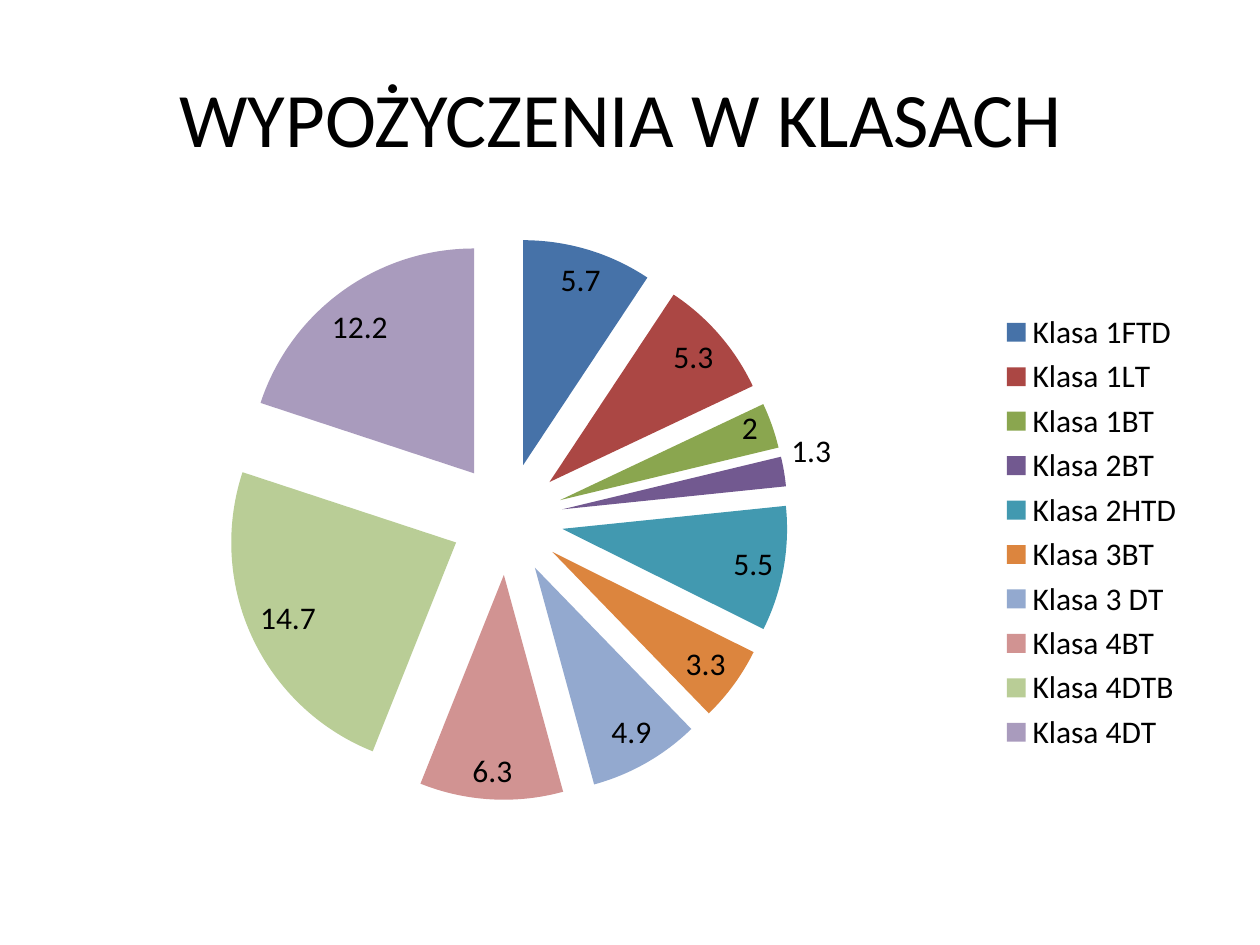
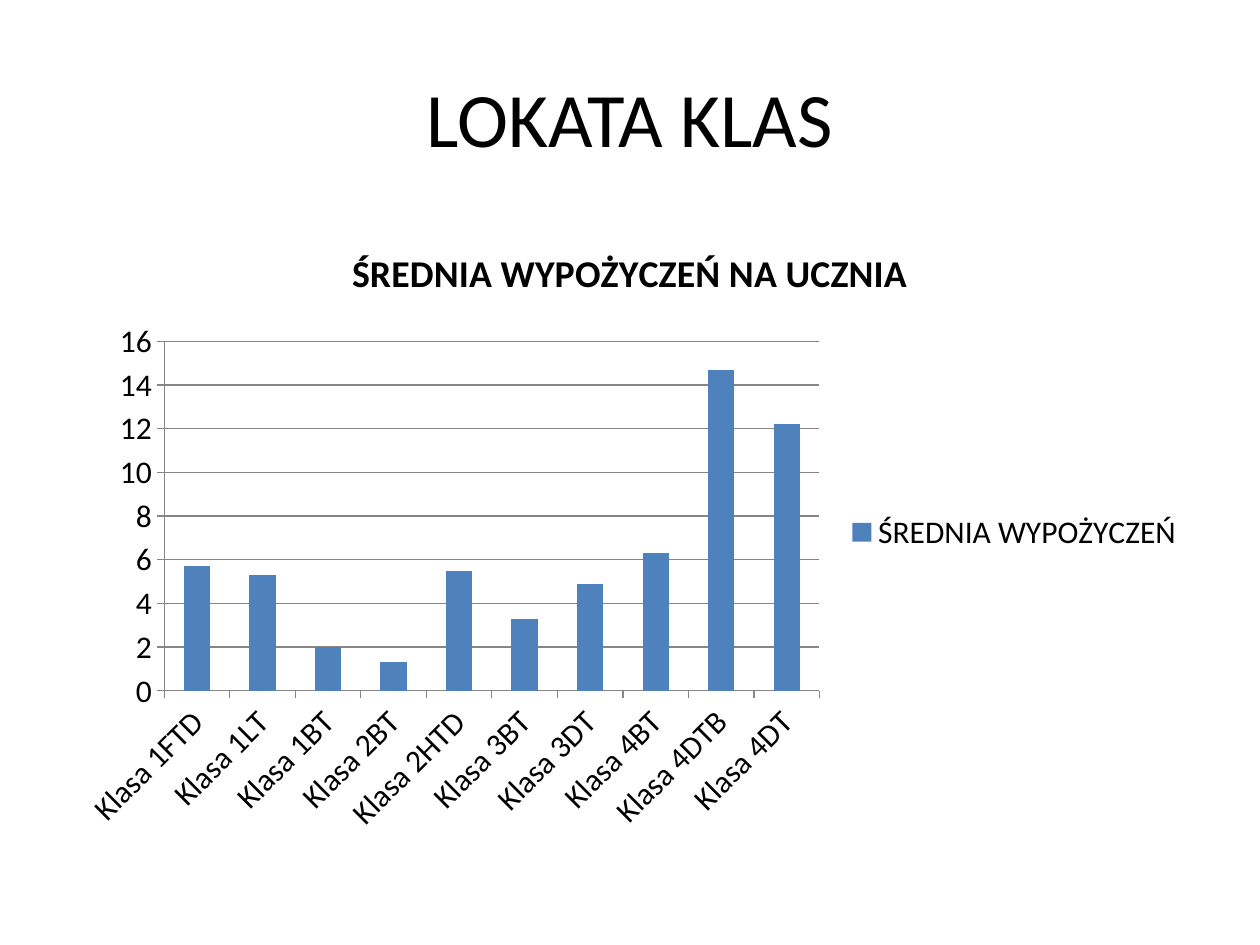
import dataclasses

import pptx
import pptx.chart.data
import pptx.dml.color
import pptx.enum.chart
import pptx.enum.text
import pptx.oxml
import pptx.oxml.ns
import pptx.util

Pt = pptx.util.Pt
XL_CHART = pptx.enum.chart.XL_CHART_TYPE


@dataclasses.dataclass(frozen=True)
class Theme:
    """Hold the fonts, sizes and colours shared by the slides."""
    font: str = "Calibri"
    heading_size: float = 44
    chart_size: float = 18
    chart_title_size: float = 21.6
    text: str = "000000"
    axis: str = "868686"
    bar: str = "4F81BD"
    slices: tuple = ("4672A8", "AB4744", "8AA64F", "725990", "4299B0",
                     "DC853E", "93A9CF", "D19392", "B9CD96", "A99BBD")


THEME = Theme()
HEADING_BOX = (36, 21.6, 648, 90)
CHART_BOX = (36, 126, 648, 356.4)
CLASSES = ("1FTD", "1LT", "1BT", "2BT", "2HTD", "3BT", "3DT", "4BT", "4DTB", "4DT")
AVERAGES = (5.7, 5.3, 2, 1.3, 5.5, 3.3, 4.9, 6.3, 14.7, 12.2)


def rgb(code):
    """Turn a hex code into a colour."""
    return pptx.dml.color.RGBColor.from_string(code)


def style_font(font, size, bold=False):
    """Apply the theme's typeface and text colour."""
    font.name, font.size, font.bold = THEME.font, Pt(size), bold
    font.color.rgb = rgb(THEME.text)


def add_heading(slide, box, wording):
    """Place the centred slide heading in the box."""
    frame = slide.shapes.add_textbox(*map(Pt, box)).text_frame
    frame.word_wrap = True
    frame.vertical_anchor = pptx.enum.text.MSO_ANCHOR.MIDDLE
    heading = frame.paragraphs[0]
    heading.text = wording
    heading.alignment = pptx.enum.text.PP_ALIGN.CENTER
    style_font(heading.font, THEME.heading_size)


def add_class_chart(slide, box, kind, series_name, labels):
    """Place a chart of the class averages with its legend at the right."""
    data = pptx.chart.data.CategoryChartData()
    data.categories = labels
    data.add_series(series_name, AVERAGES)
    chart = slide.shapes.add_chart(kind, *map(Pt, box), data).chart
    style_font(chart.font, THEME.chart_size)
    chart.has_title = False
    chart.has_legend = True
    chart.legend.position = pptx.enum.chart.XL_LEGEND_POSITION.RIGHT
    chart.legend.include_in_layout = False
    return chart


def add_loans_pie(slide, box):
    """Place the exploded pie of loans per class."""
    labels = [f"Klasa {name}".replace("3DT", "3 DT") for name in CLASSES]
    chart = add_class_chart(slide, box, XL_CHART.PIE, "Series 1", labels)
    plot = chart.plots[0]
    plot.vary_by_categories = True
    loans = plot.series[0]
    explosion = pptx.oxml.parse_xml(
        f'<c:explosion {pptx.oxml.ns.nsdecls("c")} val="25"/>')
    loans._element.find(pptx.oxml.ns.qn("c:tx")).addnext(explosion)
    for index, color in enumerate(THEME.slices):
        fill = loans.points[index].format.fill
        fill.solid()
        fill.fore_color.rgb = rgb(color)
    plot.has_data_labels = True
    values = plot.data_labels
    values.show_value = True
    values.show_percentage = False
    values.position = pptx.enum.chart.XL_LABEL_POSITION.BEST_FIT
    style_font(values.font, THEME.chart_size)


def add_ranking_columns(slide, box):
    """Place the column chart of average loans per pupil."""
    labels = [f"Klasa {name}" for name in CLASSES]
    chart = add_class_chart(slide, box, XL_CHART.COLUMN_CLUSTERED,
                            "ŚREDNIA WYPOŻYCZEŃ", labels)
    chart.has_title = True
    caption = chart.chart_title.text_frame.paragraphs[0]
    caption.text = "ŚREDNIA WYPOŻYCZEŃ NA UCZNIA"
    style_font(caption.font, THEME.chart_title_size, bold=True)
    plot = chart.plots[0]
    plot.gap_width = 150
    plot.vary_by_categories = False
    fill = plot.series[0].format.fill
    fill.solid()
    fill.fore_color.rgb = rgb(THEME.bar)
    chart.value_axis.has_major_gridlines = True
    gridlines = chart.value_axis.major_gridlines
    for part in (chart.category_axis, chart.value_axis, gridlines):
        part.format.line.color.rgb = rgb(THEME.axis)
        part.format.line.width = Pt(0.75)
    for axis in (chart.category_axis, chart.value_axis):
        axis.major_tick_mark = pptx.enum.chart.XL_TICK_MARK.OUTSIDE


def main():
    """Build and save the two slides."""
    deck = pptx.Presentation()
    deck.slide_width, deck.slide_height = Pt(720), Pt(540)
    for wording, add_chart in (("WYPOŻYCZENIA W KLASACH ", add_loans_pie),
                               ("LOKATA KLAS", add_ranking_columns)):
        slide = deck.slides.add_slide(deck.slide_layouts[6])
        add_heading(slide, HEADING_BOX, wording)
        add_chart(slide, CHART_BOX)
    deck.save("out.pptx")


if __name__ == "__main__":
    main()
